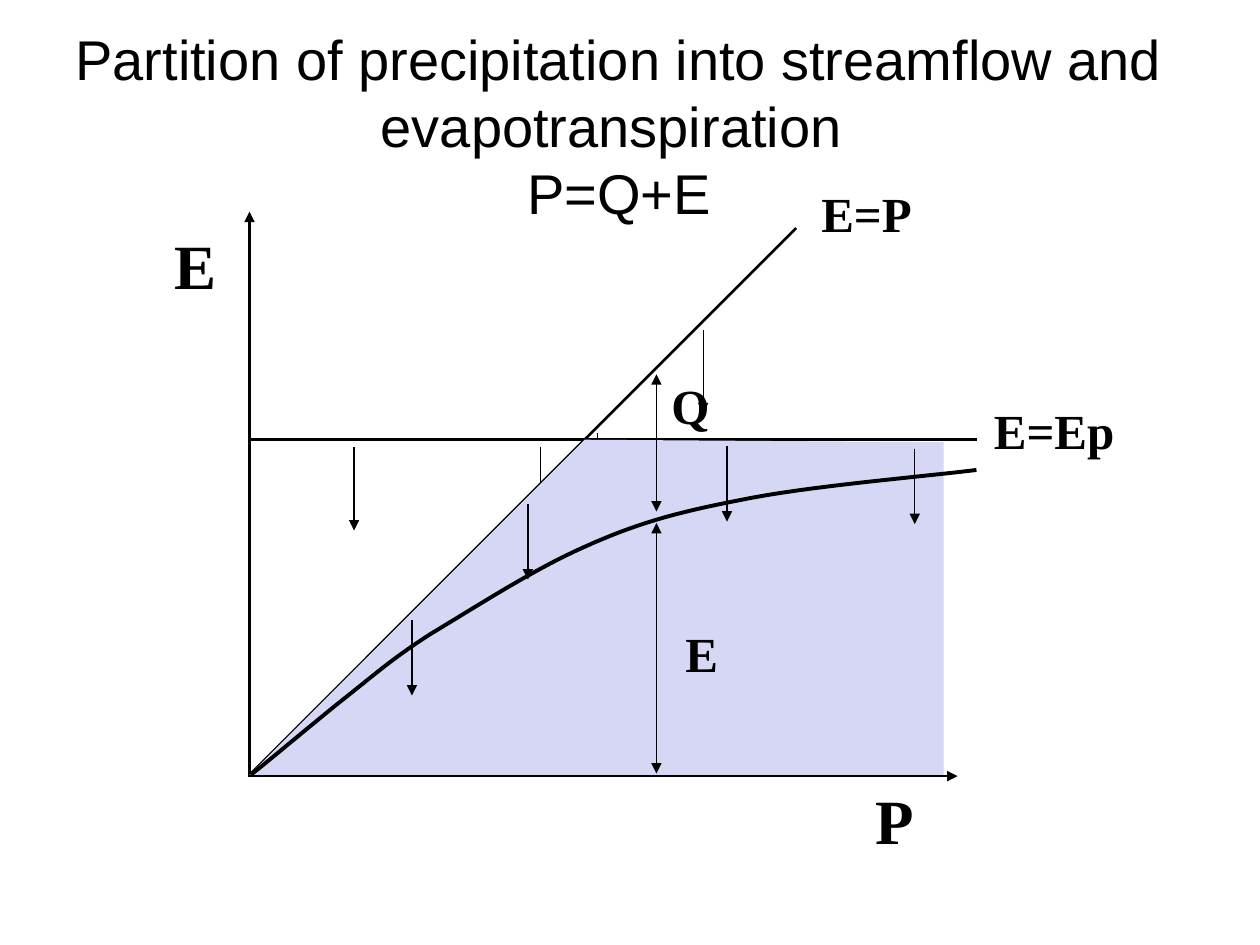
from lxml import etree
from pptx import Presentation
from pptx import util as u
from pptx.dml.color import RGBColor
from pptx.enum import shapes, text
from pptx.oxml import ns

BLACK, LAVENDER = "000000", "D6D6F5"


def color(hex_value):
    return RGBColor.from_string(hex_value)


def bezier(start, segments, steps=16):
    """Points along a chain of cubic segments (control, control, end)."""
    points = [start]
    for c1, c2, end in segments:
        p0 = points[-1]
        for i in range(1, steps + 1):
            t = i / steps
            v = 1 - t
            points.append(tuple(
                v**3 * a + 3 * v * v * t * b + 3 * v * t * t * c + t**3 * d
                for a, b, c, d in zip(p0, c1, c2, end)))
    return points


class Diagram:
    title_font, label_font = "Arial", "Times New Roman"

    def __init__(self, slide):
        self.s = slide

    def format(self, p, size, font, bold=False):
        p.font.size, p.font.name, p.font.bold = u.Pt(size), font, bold
        p.font.color.rgb = color(BLACK)

    def title(self, words, x, y, w, h):
        sp = self.s.shapes.title
        sp.left, sp.top, sp.width, sp.height = map(u.Inches, (x, y, w, h))
        tf = sp.text_frame
        tf.text = words
        tf.word_wrap = True
        tf.auto_size = text.MSO_AUTO_SIZE.NONE
        tf.vertical_anchor = text.MSO_ANCHOR.MIDDLE
        p = tf.paragraphs[0]
        p.alignment = text.PP_ALIGN.CENTER
        self.format(p, 32, self.title_font)

    def label(self, words, x, y, w, h=0.57, size=28):
        sp = self.s.shapes.add_textbox(*map(u.Inches, (x, y, w, h)))
        tf = sp.text_frame
        tf.text = words
        tf.word_wrap = False
        self.format(tf.paragraphs[0], size, self.label_font, True)

    def line(self, x1, y1, x2, y2, width=1.5, ends=()):
        sp = self.s.shapes.add_connector(
            shapes.MSO_CONNECTOR.STRAIGHT, *map(u.Inches, (x1, y1, x2, y2)))
        sp.line.color.rgb = color(BLACK)
        sp.line.width = u.Pt(width)
        ln = sp.line._get_or_add_ln()
        for end in ends:
            etree.SubElement(ln, ns.qn(f"a:{end}"), type="triangle")
        etree.SubElement(sp._element.spPr, ns.qn("a:effectLst"))

    def down_arrow(self, x, y, length):
        self.line(x, y, x, y + length, 0.75, ["tailEnd"])

    def span(self, x, top, bottom):
        self.line(x, top, x, bottom, 0.75, ["headEnd", "tailEnd"])

    def outline(self, points, fill=None, width=None):
        pts = [(u.Inches(x), u.Inches(y)) for x, y in points]
        fb = self.s.shapes.build_freeform(*pts[0])
        fb.add_line_segments(pts[1:], close=fill is not None)
        sp = fb.convert_to_shape()
        sp.shadow.inherit = False
        if fill:
            sp.fill.solid()
            sp.fill.fore_color.rgb = color(fill)
        else:
            sp.fill.background()
        if width:
            sp.line.color.rgb = color(BLACK)
            sp.line.width = u.Pt(width)
        else:
            sp.line.fill.background()


def main():
    prs = Presentation()
    prs.slide_width, prs.slide_height = u.Inches(10), u.Inches(7.5)
    d = Diagram(prs.slides.add_slide(prs.slide_layouts[5]))

    d.title("Partition of precipitation into streamflow and "
            "evapotranspiration \vP=Q+E", 0, 0.17, 9.83, 1.65)

    # Axes
    d.line(1.97, 6.16, 7.6, 6.16, ends=["tailEnd"])
    d.line(1.98, 6.16, 1.98, 1.68, ends=["tailEnd"])
    d.label("P", 6.85, 6.15, 0.51, 0.7, 36)
    d.label("E", 1.29, 1.75, 0.56, 0.7, 36)

    # Supply limit E=P, with arrows following the slope
    for i in range(4):
        d.down_arrow(3.07 + 0.837 * i, 5.08 - 0.82 * i, 0.66)
    d.line(1.98, 6.15, 6.32, 1.81)
    d.label("E=P", 6.42, 1.41, 0.98)

    # Demand limit E=Ep, with evenly spaced arrows
    for i in range(4):
        d.down_arrow(2.81 + 1.48 * i, 3.55, 0.66)
    d.line(1.99, 3.49, 7.75, 3.49)
    d.label("E=Ep", 7.79, 3.13, 1.35)

    # Feasible region below both limits
    d.outline([(1.98, 6.15), (4.64, 3.49), (7.49, 3.51), (7.49, 6.15)],
              fill=LAVENDER)
    for x, y in [(7.26, 3.56), (5.77, 3.54), (4.19, 4), (3.27, 4.92)]:
        d.down_arrow(x, y, 0.6)

    # Evapotranspiration curve and the split into Q and E
    d.outline(bezier((1.99, 6.15), [
        ((2.12, 6.05), (2.51, 5.72), (2.75, 5.53)),
        ((2.99, 5.34), (3.11, 5.23), (3.42, 5.03)),
        ((3.74, 4.84), (4.23, 4.52), (4.64, 4.34)),
        ((5.04, 4.16), (5.35, 4.07), (5.87, 3.97)),
        ((6.39, 3.86), (7.36, 3.78), (7.75, 3.73)),
    ]), width=2.25)
    d.span(5.21, 4.15, 6.14)
    d.span(5.21, 2.97, 4.06)
    d.label("E", 5.34, 4.9, 0.48)
    d.label("Q", 5.23, 2.93, 0.51)

    prs.save("out.pptx")


if __name__ == "__main__":
    main()
